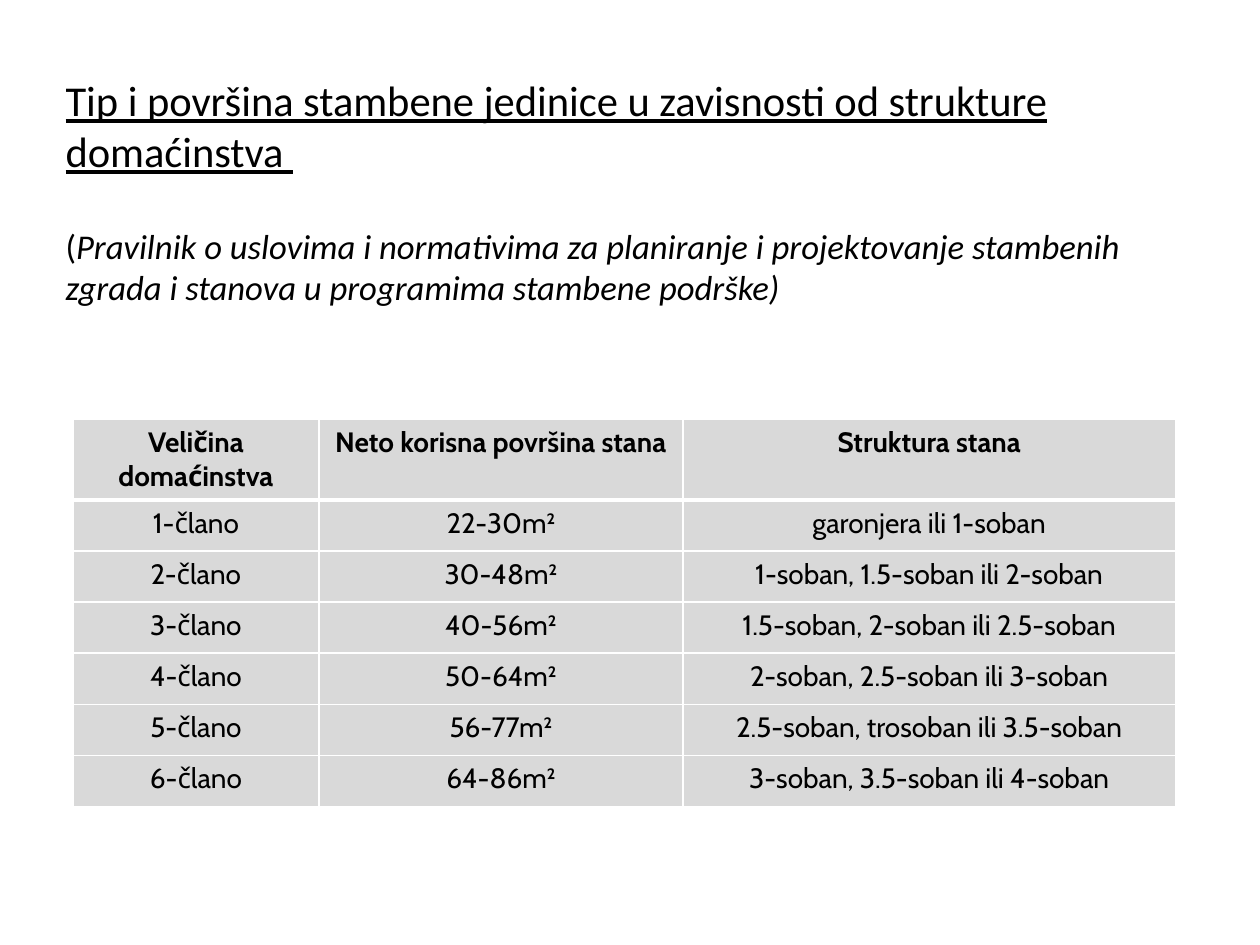
from lxml.etree import SubElement
from pptx import Presentation
from pptx.dml.color import RGBColor
from pptx.enum.text import MSO_ANCHOR as Anchor, MSO_AUTO_SIZE as Fit, PP_ALIGN as Align
from pptx.oxml.ns import qn
from pptx.util import Inches, Pt

BLACK = RGBColor(0, 0, 0)
GREY = RGBColor(0xD9, 0xD9, 0xD9)
WHITE = RGBColor(0xFF, 0xFF, 0xFF)

COLS = [1.95, 2.89, 3.91]
ROW = Pt(29.2)
ROWS = [
    ("Veličina domaćinstva", "Neto korisna površina stana", "Struktura stana"),
    ("1-člano", "22-30m²", "garonjera ili 1-soban"),
    ("2-člano", "30-48m²", "1-soban, 1.5-soban ili 2-soban"),
    ("3-člano", "40-56m²", "1.5-soban, 2-soban ili 2.5-soban"),
    ("4-člano", "50-64m²", "2-soban, 2.5-soban ili 3-soban"),
    ("5-člano", "56-77m²", "2.5-soban, trosoban ili 3.5-soban"),
    ("6-člano", "64-86m²", "3-soban, 3.5-soban ili 4-soban"),
]


def add_run(para, text, face, size, bold=False, slant=False, under=False):
    run = para.add_run()
    run.text = text
    font = run.font
    font.name, font.size, font.color.rgb = face, Pt(size), BLACK
    font.bold, font.italic, font.underline = bold, slant, under


def set_edge(cell, side, width):
    line = SubElement(cell._tc.get_or_add_tcPr(), qn("a:" + side), w=str(Pt(width)))
    fill = SubElement(line, qn("a:solidFill"))
    SubElement(fill, qn("a:srgbClr"), val=str(WHITE))


deck = Presentation()
deck.slide_width, deck.slide_height = Inches(10), Inches(7.5)
slide = deck.slides.add_slide(deck.slide_layouts[5])

title = slide.shapes.title
title.left, title.top = Inches(0.42), Inches(0.25)
title.width, title.height = Inches(9), Inches(1.92)
frame = title.text_frame
frame.word_wrap = True
frame.auto_size = Fit.NONE
frame.vertical_anchor = Anchor.TOP
frame.margin_top = Inches(0.34)

head = frame.paragraphs[0]
head.alignment = Align.LEFT
add_run(head, "Tip i površina stambene jedinice u zavisnosti od strukture domaćinstva ",
        "Calibri", 24.3, under=True)
note = frame.add_paragraph()
note.alignment = Align.LEFT
note.space_before = Pt(27.5)
add_run(note, "(", "Calibri", 19.8)
add_run(note, "Pravilnik o uslovima i normativima za planiranje i projektovanje "
        "stambenih zgrada i stanova u programima stambene podrške)",
        "Calibri", 19.8, slant=True)

table = slide.shapes.add_table(len(ROWS), len(COLS), Inches(0.58), Inches(3.33),
                               Inches(sum(COLS)), ROW * len(ROWS)).table
for col, width in zip(table.columns, COLS):
    col.width = Inches(width)
for r, texts in enumerate(ROWS):
    table.rows[r].height = ROW
    for c, text in enumerate(texts):
        cell = table.cell(r, c)
        for side in ("lnL", "lnR"):
            set_edge(cell, side, 1)
        set_edge(cell, "lnT", 3 if r == 1 else 1)
        set_edge(cell, "lnB", 3 if r == 0 else 1)
        cell.fill.solid()
        cell.fill.fore_color.rgb = GREY
        para = cell.text_frame.paragraphs[0]
        para.alignment = Align.CENTER
        add_run(para, text, "Cabin", 16, bold=r == 0)

deck.save("out.pptx")
